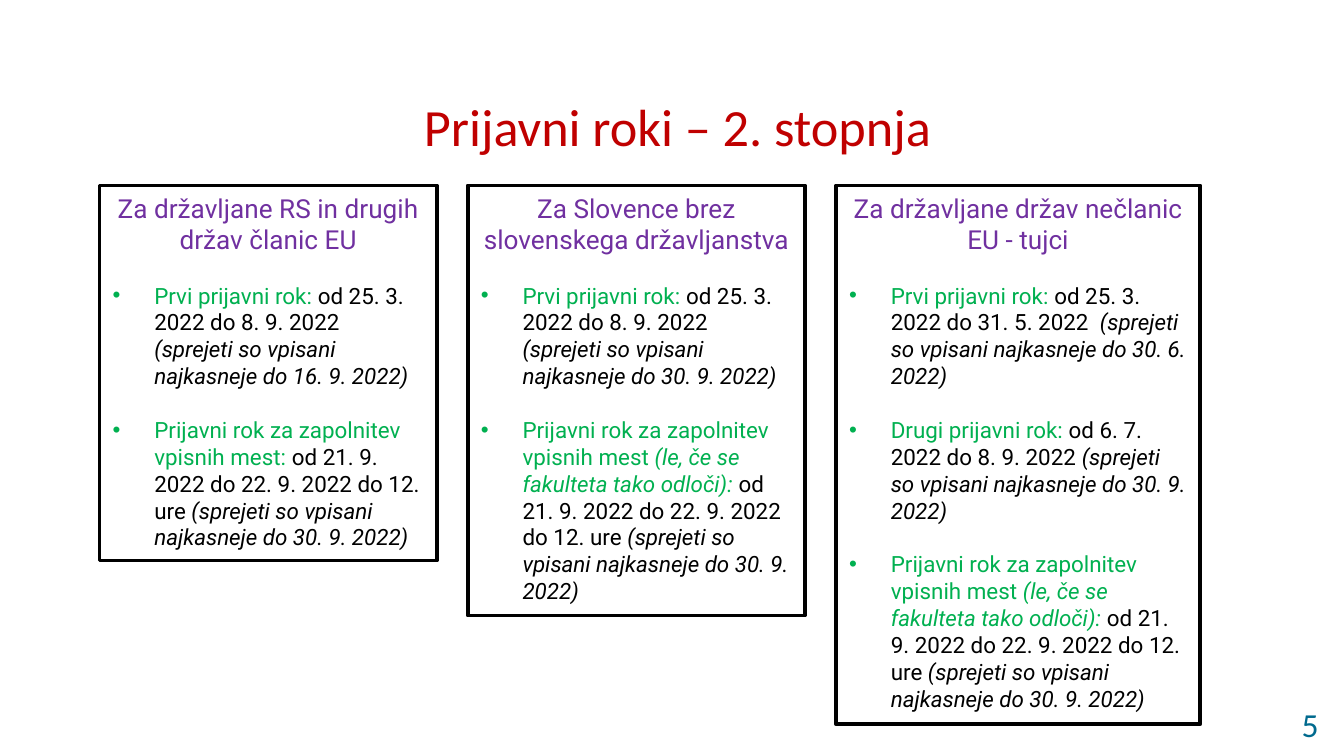
import pptx
import pptx.dml.color
import pptx.enum.shapes
import pptx.enum.text
import pptx.oxml.ns
import pptx.util
import lxml.etree

Inches = pptx.util.Inches
Pt = pptx.util.Pt
RGBColor = pptx.dml.color.RGBColor
PP_ALIGN = pptx.enum.text.PP_ALIGN
MSO_ANCHOR = pptx.enum.text.MSO_ANCHOR

RED = RGBColor(0xC0, 0x00, 0x00)
TEAL = RGBColor(0x00, 0x6A, 0x8E)
PURPLE = RGBColor(0x70, 0x30, 0xA0)
GREEN = RGBColor(0x00, 0xB0, 0x50)
BLACK = RGBColor(0x00, 0x00, 0x00)
WHITE = RGBColor(0xFF, 0xFF, 0xFF)

CARD_TOP = 1.38
BLANK_LINE = Pt(14.4)
FIRST_TERM = "Prvi prijavni rok: "
FILL_TERM = "Prijavni rok za zapolnitev vpisnih mest"
FILL_CONDITION = "(le, če se fakulteta tako odloči): "
FILL_DATES = "od 21. 9. 2022 do 22. 9. 2022 do 12. ure "
FIRST_DATES = "od 25. 3. 2022 do 8. 9. 2022  "

CARDS = [
    (0.74, 2.51, 2.79, "Za državljane RS in drugih držav članic EU", [
        (FIRST_TERM, "", FIRST_DATES, "16. 9. 2022"),
        (FILL_TERM + ": ", "", FILL_DATES, "30. 9. 2022"),
    ]),
    (3.48, 2.51, 3.2, "Za Slovence brez slovenskega državljanstva", [
        (FIRST_TERM, "", FIRST_DATES, "30. 9. 2022"),
        (FILL_TERM + " ", FILL_CONDITION, FILL_DATES, "30. 9. 2022"),
    ]),
    (6.22, 2.71, 4.01, "Za državljane držav nečlanic EU - tujci", [
        (FIRST_TERM, "", "od 25. 3. 2022 do 31. 5. 2022  ", "30. 6. 2022"),
        ("Drugi prijavni rok: ", "", "od 6. 7. 2022 do 8. 9. 2022 ", "30. 9. 2022"),
        (FILL_TERM + " ", FILL_CONDITION, FILL_DATES, "30. 9. 2022"),
    ]),
]


def format_run(run, font_name, size, color, italic=False):
    run.font.name = font_name
    run.font.size = Pt(size)
    run.font.color.rgb = color
    run.font.italic = italic


def add_bullet(paragraph):
    properties = paragraph._p.get_or_add_pPr()
    properties.set("marL", str(Inches(0.31)))
    properties.set("indent", str(-Inches(0.31)))
    for tag, name, value in (("a:buFont", "typeface", "Arial"), ("a:buChar", "char", "•")):
        element = lxml.etree.SubElement(properties, pptx.oxml.ns.qn(tag))
        element.set(name, value)


def add_title(slide, left, top, width, height):
    title = slide.shapes.title
    title.left, title.top = Inches(left), Inches(top)
    title.width, title.height = Inches(width), Inches(height)
    text_frame = title.text_frame
    text_frame.text = "Prijavni roki – 2. stopnja"
    text_frame.vertical_anchor = MSO_ANCHOR.MIDDLE
    text_frame.margin_bottom = Inches(0.52)
    paragraph = text_frame.paragraphs[0]
    paragraph.alignment = PP_ALIGN.CENTER
    format_run(paragraph.runs[0], "Calibri", 28, RED)


def add_slide_number(slide, left, top, width, height):
    text_box = slide.shapes.add_textbox(Inches(left), Inches(top), Inches(width), Inches(height))
    text_frame = text_box.text_frame
    text_frame.word_wrap = True
    text_frame.vertical_anchor = MSO_ANCHOR.MIDDLE
    text_frame.text = "5"
    paragraph = text_frame.paragraphs[0]
    paragraph.alignment = PP_ALIGN.RIGHT
    format_run(paragraph.runs[0], "Calibri", 18, TEAL)


def add_deadline(text_frame, term, condition, dates, enrolled_by):
    paragraph = text_frame.add_paragraph()
    add_bullet(paragraph)
    paragraph.alignment = PP_ALIGN.LEFT
    paragraph.space_before = BLANK_LINE
    parts = [
        (term, GREEN, False),
        (condition, GREEN, True),
        (dates, BLACK, False),
        (f"(sprejeti so vpisani najkasneje do {enrolled_by})", BLACK, True),
    ]
    for text, color, italic in parts:
        if text:
            run = paragraph.add_run()
            run.text = text
            format_run(run, "Roboto", 12, color, italic)


def add_card(slide, left, top, width, height, heading, deadlines):
    card = slide.shapes.add_shape(
        pptx.enum.shapes.MSO_SHAPE.RECTANGLE,
        Inches(left), Inches(top), Inches(width), Inches(height))
    card.shadow.inherit = False
    card.fill.solid()
    card.fill.fore_color.rgb = WHITE
    card.line.color.rgb = BLACK
    card.line.width = Pt(2)
    text_frame = card.text_frame
    text_frame.word_wrap = True
    text_frame.auto_size = pptx.enum.text.MSO_AUTO_SIZE.SHAPE_TO_FIT_TEXT
    text_frame.vertical_anchor = MSO_ANCHOR.TOP
    text_frame.text = heading
    paragraph = text_frame.paragraphs[0]
    paragraph.alignment = PP_ALIGN.CENTER
    format_run(paragraph.runs[0], "Roboto", 14, PURPLE)
    for deadline in deadlines:
        add_deadline(text_frame, *deadline)


def main():
    presentation = pptx.Presentation()
    presentation.slide_width = Inches(10)
    presentation.slide_height = Inches(10 * 9 / 16)
    slide = presentation.slides.add_slide(presentation.slide_layouts[5])
    add_title(slide, 0.58, 0.51, 8.92, 1.32)
    add_slide_number(slide, 8.93, 5.23, 0.98, 0.32)
    for left, width, height, heading, deadlines in CARDS:
        add_card(slide, left, CARD_TOP, width, height, heading, deadlines)
    presentation.save("out.pptx")


if __name__ == "__main__":
    main()
